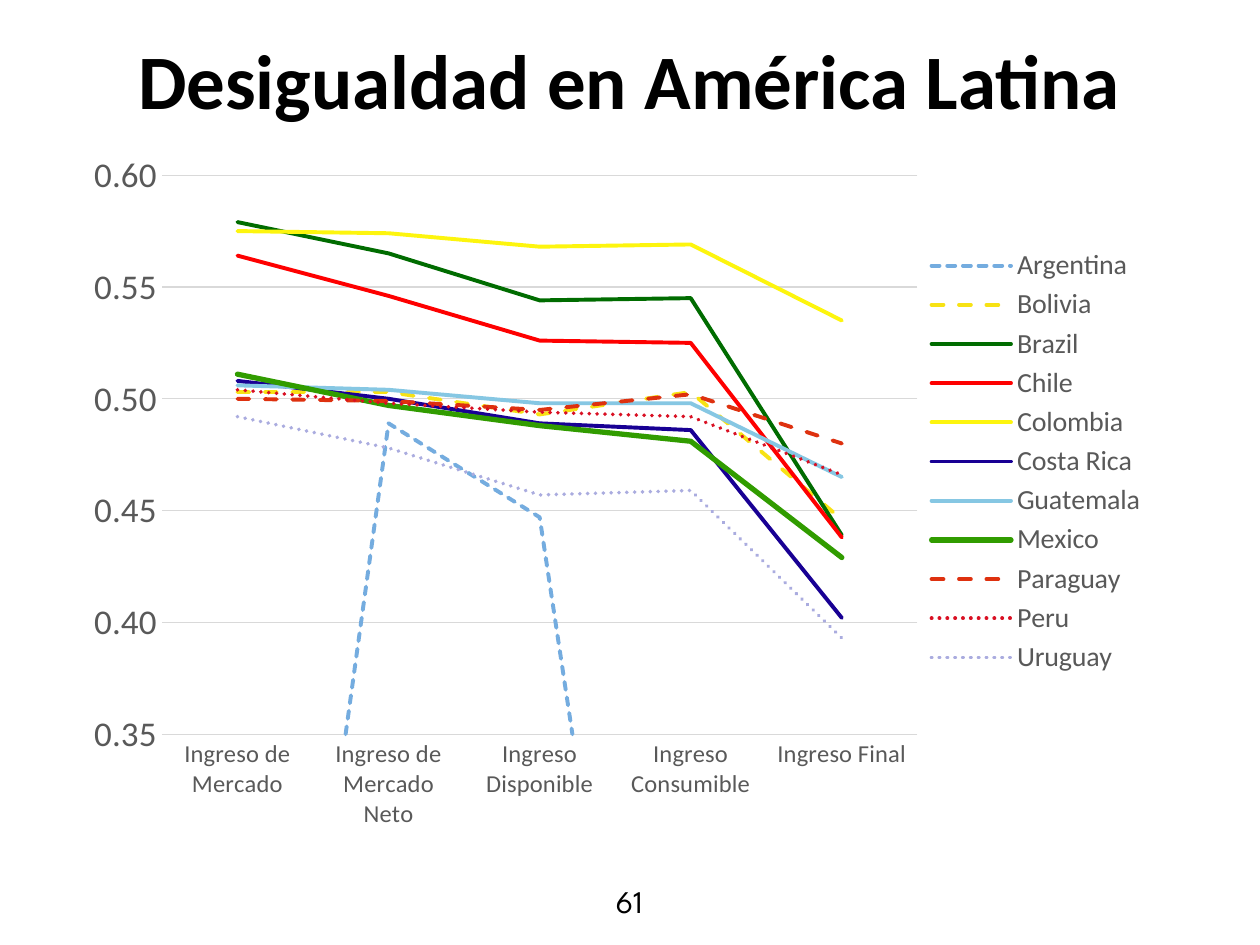
"""Build the slide on inequality in Latin America."""
import pptx
import pptx.chart.data
import pptx.dml.color
import pptx.enum.chart
import pptx.enum.dml
import pptx.enum.text
import pptx.oxml
import pptx.oxml.ns
import pptx.util

Inches, Pt = pptx.util.Inches, pptx.util.Pt
qn = pptx.oxml.ns.qn
DASH = pptx.enum.dml.MSO_LINE

COLORS = {
    "text": "000000", "label": "595959", "grid": "D9D9D9",
    "Argentina": "74ACDF", "Bolivia": "F7E214", "Brazil": "006C00",
    "Chile": "FE0000", "Colombia": "FDF50E", "Costa Rica": "180094",
    "Guatemala": "86C7E3", "Mexico": "319C00", "Paraguay": "DE310F",
    "Peru": "D91023", "Uruguay": "AAACDF",
}
TEXTS = [
    ("Desigualdad en América Latina", (0.5, 0, 9, 1.25),
     {"name": "Calibri", "size": Pt(44), "bold": True}),
    ("61", (4.21, 6.95, 1.57, 0.4), {"name": "League Spartan", "size": Pt(18)}),
]
CATEGORIES = ["Ingreso de Mercado", "Ingreso de Mercado Neto", "Ingreso Disponible",
              "Ingreso Consumible", "Ingreso Final"]
SERIES = {
    "Argentina": (None, 0.489, 0.447, None, None),
    "Bolivia": (0.503, 0.503, 0.493, 0.503, 0.446),
    "Brazil": (0.579, 0.565, 0.544, 0.545, 0.439),
    "Chile": (0.564, 0.546, 0.526, 0.525, 0.438),
    "Colombia": (0.575, 0.574, 0.568, 0.569, 0.535),
    "Costa Rica": (0.508, 0.5, 0.489, 0.486, 0.402),
    "Guatemala": (0.506, 0.504, 0.498, 0.498, 0.465),
    "Mexico": (0.511, 0.497, 0.488, 0.481, 0.429),
    "Paraguay": (0.5, 0.499, 0.495, 0.502, 0.48),
    "Peru": (0.504, 0.498, 0.494, 0.492, 0.466),
    "Uruguay": (0.492, 0.478, 0.457, 0.459, 0.393),
}
DASHES = {"Argentina": DASH.SQUARE_DOT, "Bolivia": DASH.DASH, "Paraguay": DASH.DASH,
          "Peru": DASH.ROUND_DOT, "Uruguay": DASH.ROUND_DOT}
WIDTHS = {"Mexico": 3}
CHART_BOX = (0.39, 1.12, 8.95, 5.46)
PLOT_LAYOUT = (0.1, 0.05, 0.67, 0.82)
LEGEND_LAYOUT = (0.77, 0.15, 0.21, 0.64)


def rgb(name):
    return pptx.dml.color.RGBColor.from_string(COLORS[name])


def set_font(font, color, values):
    for key, value in values.items():
        setattr(font, key, value)
    font.color.rgb = rgb(color)


def add_text(s, text, box, values):
    tf = s.shapes.add_textbox(*map(Inches, box)).text_frame
    tf.word_wrap = True
    tf.vertical_anchor = pptx.enum.text.MSO_ANCHOR.MIDDLE
    p = tf.paragraphs[0]
    p.alignment = pptx.enum.text.PP_ALIGN.CENTER
    r = p.add_run()
    r.text = text
    set_font(r.font, "text", values)


def make_layout(parent, box, inner=False):
    for old in parent.findall(qn("c:layout")):
        parent.remove(old)
    target = '<c:layoutTarget val="inner"/>' if inner else ""
    modes = "".join(f'<c:{k}Mode val="edge"/>' for k in "xy")
    sizes = "".join(f'<c:{k} val="{v}"/>' for k, v in zip("xywh", box))
    return pptx.oxml.parse_xml(
        f'<c:layout {pptx.oxml.ns.nsdecls("c")}><c:manualLayout>'
        f"{target}{modes}{sizes}</c:manualLayout></c:layout>")


def add_chart(s):
    data = pptx.chart.data.CategoryChartData(number_format="0.00")
    data.categories = CATEGORIES
    for name, values in SERIES.items():
        data.add_series(name, values)
    kinds = pptx.enum.chart
    chart = s.shapes.add_chart(
        kinds.XL_CHART_TYPE.LINE, *map(Inches, CHART_BOX), data).chart
    chart.has_title = False
    set_font(chart.font, "text", {"name": "League Spartan", "size": Pt(10)})

    for series in chart.plots[0].series:
        series.smooth = False
        series.marker.style = kinds.XL_MARKER_STYLE.NONE
        line = series.format.line
        line.color.rgb = rgb(series.name)
        line.width = Pt(WIDTHS.get(series.name, 2.25))
        line.dash_style = DASHES.get(series.name)
        series.format.line._get_or_add_ln().set("cap", "rnd")

    cat, val = chart.category_axis, chart.value_axis
    for axis, size in ((cat, 14), (val, 20)):
        axis.major_tick_mark = axis.minor_tick_mark = kinds.XL_TICK_MARK.NONE
        set_font(axis.tick_labels.font, "label", {"name": "Calibri", "size": Pt(size)})
    val.minimum_scale, val.maximum_scale, val.major_unit = 0.35, 0.6, 0.05
    val.tick_labels.number_format = "0.00"
    val.tick_labels.number_format_is_linked = False
    val.format.line.fill.background()
    val.has_major_gridlines = True
    for line in (cat.format.line, val.major_gridlines.format.line):
        line.color.rgb = rgb("grid")
        line.width = Pt(0.75)

    chart.has_legend = True
    legend = chart.legend
    legend.position = kinds.XL_LEGEND_POSITION.BOTTOM
    legend.include_in_layout = False
    set_font(legend.font, "label", {"name": "Calibri", "size": Pt(16)})

    root = chart._chartSpace
    plot, key = root.find(".//" + qn("c:plotArea")), root.find(".//" + qn("c:legend"))
    plot.insert(0, make_layout(plot, PLOT_LAYOUT, True))
    key.find(qn("c:overlay")).addprevious(make_layout(key, LEGEND_LAYOUT))
    root.find(".//" + qn("c:dispBlanksAs")).set("val", "zero")


def main():
    prs = pptx.Presentation()
    prs.slide_width, prs.slide_height = Inches(10), Inches(7.5)
    s = prs.slides.add_slide(prs.slide_layouts[6])
    for text, box, values in TEXTS:
        add_text(s, text, box, values)
    add_chart(s)
    prs.save("out.pptx")


if __name__ == "__main__":
    main()
